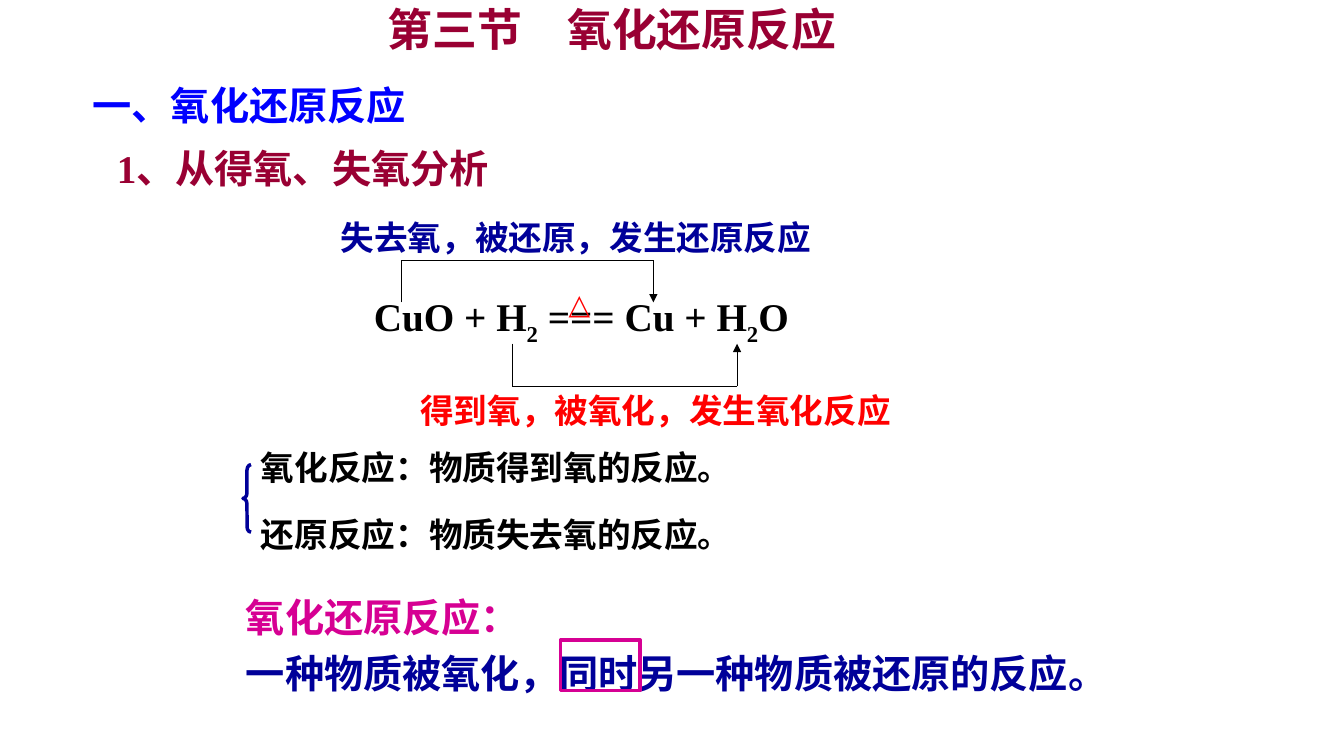
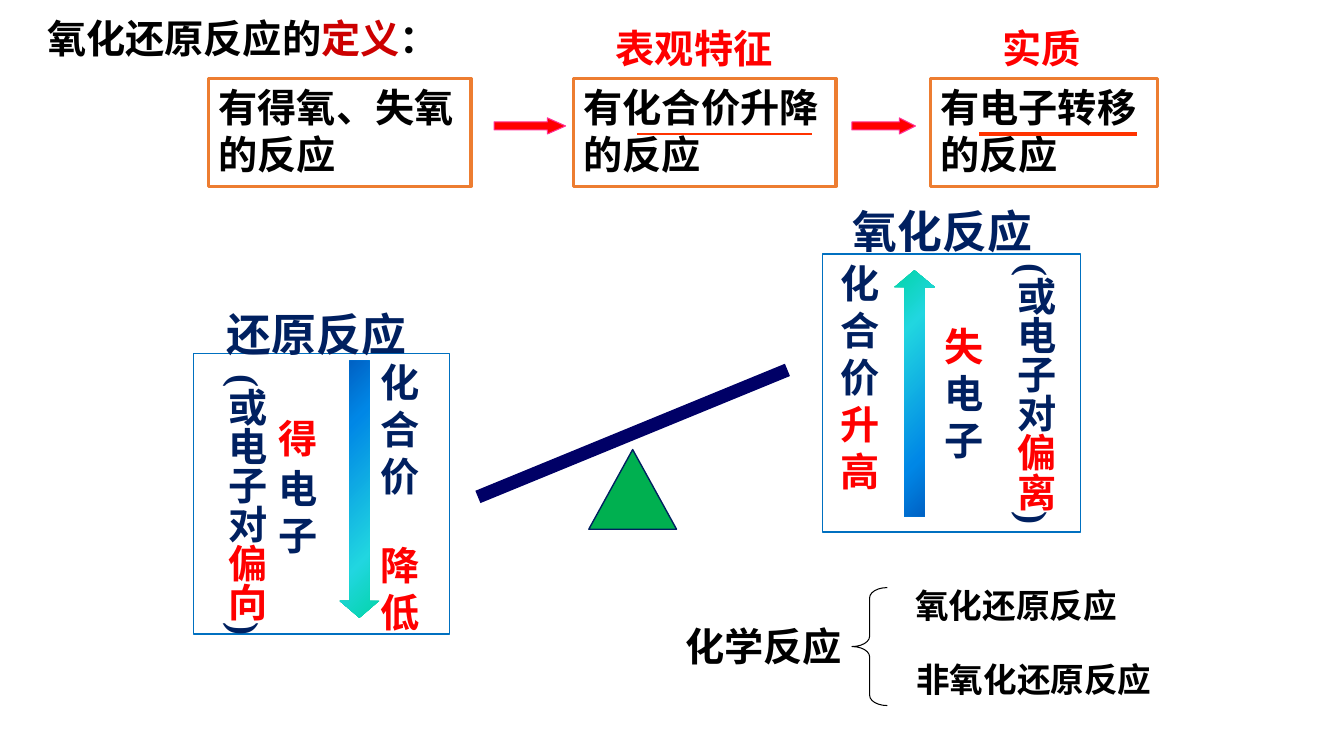
from itertools import pairwise

from lxml.etree import SubElement
from pptx import Presentation
from pptx.dml.color import RGBColor
from pptx.enum.shapes import MSO_CONNECTOR, MSO_SHAPE
from pptx.enum.text import MSO_ANCHOR, MSO_AUTO_SIZE, PP_ALIGN
from pptx.oxml.ns import qn
from pptx.util import Emu, Pt

PX = 9144
LATIN = "Times New Roman"
HAN = "Noto Sans CJK SC"
BLACK = "000000"
RED = "FF0000"
BLUE = "000099"
NAVY = "002060"
WINE = "990033"
PINK = "D60093"
ORANGE = "ED7D31"
FRAME = "0070C0"
GRADIENT = ((0, "03D4A8"), (25, "21D6E0"), (75, "0087E6"), (100, "005CBF"))


def color(value):
    return RGBColor.from_string(value)


def px(*lengths):
    return [Emu(length * PX) for length in lengths]


class Board:
    def __init__(self):
        self.deck = Presentation()
        self.deck.slide_width, self.deck.slide_height = px(1333, 750)
        self.page = None

    def new_page(self):
        self.page = self.deck.slides.add_slide(self.deck.slide_layouts[6])

    def fill_frame(self, frame, paragraphs, size, latin=LATIN, spacing=1.2):
        frame.vertical_anchor = MSO_ANCHOR.TOP
        for index, spans in enumerate(paragraphs):
            para = frame.add_paragraph() if index else frame.paragraphs[0]
            para.alignment = PP_ALIGN.LEFT
            para.line_spacing = Pt(round(size * spacing, 1))
            for text, tint, *baseline in spans:
                span = para.add_run()
                span.text = text
                span.font.size = Pt(size)
                span.font.bold = True
                span.font.name = latin
                span.font.color.rgb = color(tint)
                properties = span.font._element
                SubElement(properties, qn("a:ea")).set("typeface", HAN)
                if baseline:
                    properties.set("baseline", str(baseline[0] * 1000))

    def text(self, place, *paragraphs, size=28, wrap=True, vertical=False, **style):
        box = self.page.shapes.add_textbox(*px(*place))
        frame = box.text_frame
        frame.word_wrap = wrap
        frame.auto_size = MSO_AUTO_SIZE.SHAPE_TO_FIT_TEXT
        if vertical:
            frame._txBody.bodyPr.set("vert", "eaVert")
        self.fill_frame(frame, paragraphs, size, **style)

    def shape(self, kind, place, fill=None, line=None, width=1, adjust=(), turn=0):
        shape = self.page.shapes.add_shape(kind, *px(*place))
        shape.shadow.inherit = False
        shape.rotation = turn
        for index, value in enumerate(adjust):
            shape.adjustments[index] = value
        if fill:
            shape.fill.solid()
            shape.fill.fore_color.rgb = color(fill)
        else:
            shape.fill.background()
        if line:
            shape.line.color.rgb = color(line)
            shape.line.width = Pt(width)
        else:
            shape.line.fill.background()
        return shape

    def framed_text(self, place, text):
        box = self.shape(MSO_SHAPE.RECTANGLE, place, line=ORANGE, width=2.5)
        box.text_frame.word_wrap = True
        self.fill_frame(box.text_frame, [[(text, BLACK)]], 28)

    def gradient_arrow(self, place, turn, head):
        arrow = self.shape(MSO_SHAPE.RIGHT_ARROW, place, adjust=(0.5, head), turn=turn)
        arrow.fill.gradient()
        gradient = arrow.element.spPr.find(qn("a:gradFill"))
        for child in list(gradient):
            gradient.remove(child)
        gradient.set("rotWithShape", "1")
        stops = SubElement(gradient, qn("a:gsLst"))
        for position, tint in GRADIENT:
            stop = SubElement(stops, qn("a:gs"))
            stop.set("pos", str(position * 1000))
            SubElement(stop, qn("a:srgbClr")).set("val", tint)
        SubElement(gradient, qn("a:lin")).set("ang", str(135 * 60000))

    def lines(self, *points, tint=BLACK, width=0.75, arrow=False):
        for start, end in pairwise(points):
            line = self.page.shapes.add_connector(
                MSO_CONNECTOR.STRAIGHT, *px(*start, *end))
            line.line.color.rgb = color(tint)
            line.line.width = Pt(width)
            properties = line.element.spPr
            if arrow and end == points[-1]:
                tail = SubElement(properties.find(qn("a:ln")), qn("a:tailEnd"))
                tail.set("type", "triangle")
            SubElement(properties, qn("a:effectLst"))


def oxygen_page(board):
    board.new_page()
    board.text((82, 76, 469, 57), [("一、氧化还原反应", "0000FF")])
    board.text((106, 138, 405, 57), [("1、从得氧、失氧分析", WINE)], wrap=False)
    board.text((361, 293, 446, 57), [
        ("CuO + H", BLACK), ("2", BLACK, -30), (" === Cu + H", BLACK),
        ("2", BLACK, -30), ("O", BLACK)], wrap=False)
    board.text((554, 279, 55, 44), [("△", RED)], size=20, wrap=False)
    board.lines((398, 300), (398, 258), (648, 258), (648, 300), arrow=True)
    board.lines((508, 341), (508, 383), (731, 383), (731, 341), arrow=True)
    board.text((407, 382, 538, 50), [("得到氧，被氧化，发生氧化反应", RED)], size=24)
    board.text((328, 210, 605, 50), [("失去氧，被还原，发生还原反应", BLUE)], size=24)
    board.text((234, 574, 925, 122), [("氧化还原反应：", PINK)],
               [("一种物质被氧化，同时另一种物质被还原的反应。", BLUE)], spacing=1.44)
    definitions = ("氧化反应：物质得到氧的反应。", "还原反应：物质失去氧的反应。")
    for row, definition in enumerate(definitions):
        board.text((249, 438 + 67 * row, 502, 51), [(definition, BLACK)],
                   size=24, wrap=False)
    board.shape(MSO_SHAPE.LEFT_BRACE, (241, 461, 8, 67), line=BLUE, width=2.5,
                adjust=(0.67, 0.5))
    board.shape(MSO_SHAPE.RECTANGLE, (556, 635, 79, 50), line=PINK, width=2.5)
    board.text((375, -3, 477, 63), [("第三节　氧化还原反应", WINE)],
               size=32, wrap=False, latin=HAN)


def electron_page(board):
    board.new_page()
    for left, width, head in ((490, 71, 1.13), (845, 63, 1)):
        board.shape(MSO_SHAPE.RIGHT_ARROW, (left, 117, width, 16), fill=RED,
                    line="FF3399", width=0.75, adjust=(0.5, head))
    for left, width, label in ((984, 108, "实质"), (601, 200, "表观特征")):
        board.text((left, 19, width, 57), [(label, RED)])
    for left, width, label in ((207, 260, "有得氧、失氧的反应"),
                               (569, 260, "有化合价升降的反应"),
                               (923, 225, "有电子转移的反应")):
        board.framed_text((left, 78, width, 107), label)
    for left, right, width in ((971, 1128, 2.25), (632, 805, 1.75)):
        board.lines((left, 133), (right, 133), tint="FF3300", width=width)
    board.text((37, 9, 520, 57), [("氧化还原反应的", BLACK), ("定义", "CC0000"),
                                  ("：", BLACK)])

    board.text((670, 613, 179, 57), [("化学反应", BLACK)])
    board.shape(MSO_SHAPE.LEFT_BRACE, (845, 583, 35, 117), line=BLACK, width=0.75,
                adjust=(0.29, 0.5))
    board.text((898, 575, 223, 51), [("氧化还原反应", BLACK)], size=24, wrap=False)
    board.text((899, 649, 257, 51), [("非氧化还原反应", BLACK)], size=24, wrap=False)

    board.gradient_arrow((229, 466, 255, 39), 90, 0.43)
    board.gradient_arrow((785, 370, 244, 40), 270, 0.42)
    for place, *spans in (
            ((368, 351, 63, 150), ("化合价", NAVY)),
            ((368, 532, 71, 103), ("降低", RED)),
            ((266, 456, 63, 103), ("电子", NAVY)),
            ((266, 406, 71, 57), ("得", RED)),
            ((824, 252, 63, 244), ("化合价", NAVY), ("升高", RED)),
            ((927, 315, 63, 150), ("失", RED), ("电子", NAVY))):
        board.text(place, spans)
    board.shape(MSO_SHAPE.ISOSCELES_TRIANGLE, (584, 446, 87, 79), fill="00B050", line=NAVY)
    for place in ((192, 351, 254, 278), (816, 252, 256, 276)):
        board.shape(MSO_SHAPE.RECTANGLE, place, line=FRAME)
    for left, top, label in ((215, 299, "还原反应"), (836, 197, "氧化反应")):
        board.text((left, top, 244, 63), [(label, NAVY)], size=32)
    for left, top, shift in ((206, 362, "偏向"), (988, 252, "偏离")):
        board.text((left, top, 67, 323),
                   [("(或电子对", NAVY), (shift, RED), (")", NAVY)], vertical=True)
    board.lines((474, 493), (781, 367), tint="000066", width=9.5)


def main():
    board = Board()
    oxygen_page(board)
    electron_page(board)
    board.deck.save("out.pptx")


if __name__ == "__main__":
    main()
